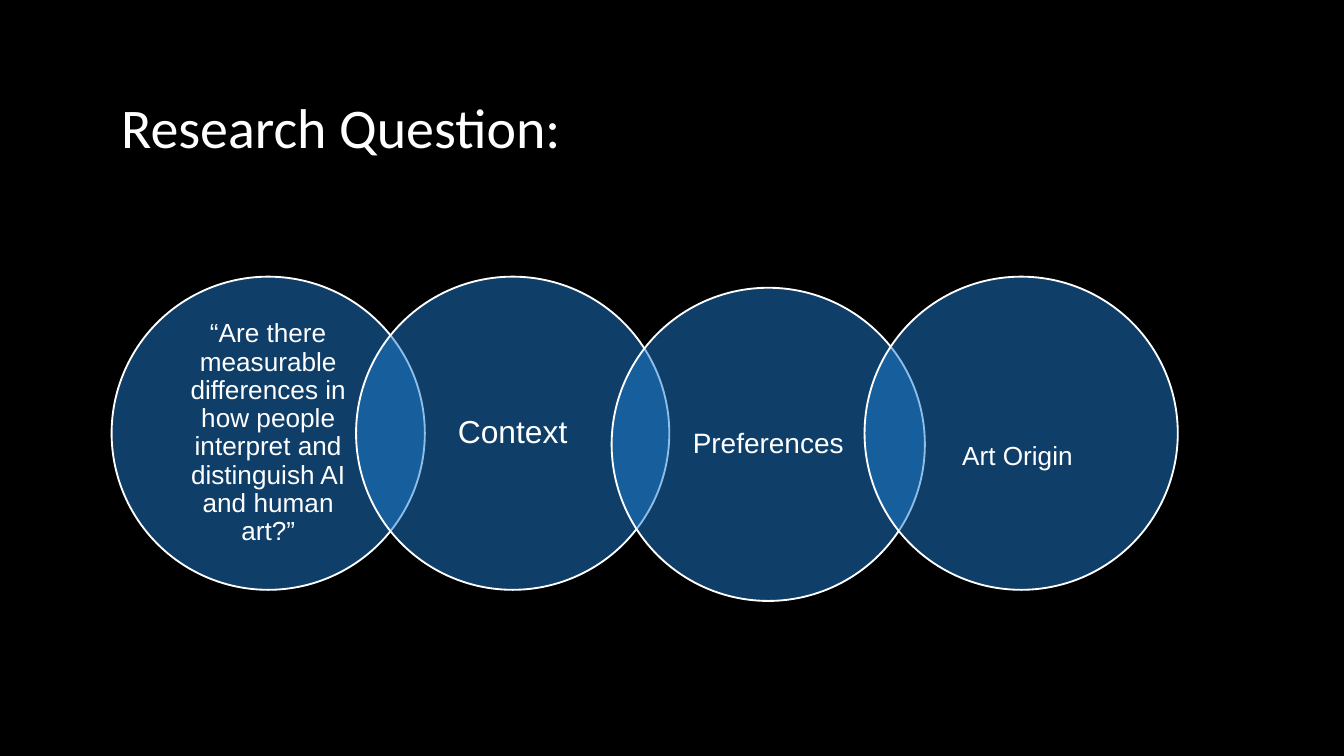
from dataclasses import dataclass

from lxml.etree import SubElement
from pptx import Presentation
from pptx.dml.color import RGBColor
from pptx.enum.shapes import MSO_SHAPE as Shape
from pptx.enum.text import MSO_ANCHOR as Anchor, PP_ALIGN as Align
from pptx.oxml.ns import qn
from pptx.util import Cm, Pt


@dataclass(frozen=True)
class Theme:
    background: RGBColor = RGBColor(0x00, 0x00, 0x00)
    white: RGBColor = RGBColor(0xFF, 0xFF, 0xFF)
    blue: RGBColor = RGBColor(0x1F, 0x7E, 0xD2)
    title_font: str = "Calibri"
    body_font: str = "Arial"
    title_size: int = 30
    large: int = 17
    medium: int = 15
    small: int = 14


theme = Theme()


def add_text(page, text, left, top, width, height, font, size):
    box = page.shapes.add_textbox(Cm(left), Cm(top), Cm(width), Cm(height))
    box.text_frame.word_wrap = True
    para = box.text_frame.paragraphs[0]
    para.text = text
    span = para.runs[0]
    span.font.name = font
    span.font.size = Pt(size)
    span.font.color.rgb = theme.white
    return box.text_frame


# Page
deck = Presentation()
deck.slide_width, deck.slide_height = Cm(25.4), Cm(14.29)
page = deck.slides.add_slide(deck.slide_layouts[6])
page.background.fill.solid()
page.background.fill.fore_color.rgb = theme.background

# Title
frame = add_text(page, "Research Question:", 2.11, 1.65, 16.23, 1.47,
                 theme.title_font, theme.title_size)
frame.margin_left = frame.margin_right = Cm(0.18)
frame.margin_top = frame.margin_bottom = Cm(0.1)

# Overlapping circles: text, left, top, type size, extra space above the text
question = ("“Are there measurable differences in how people interpret "
            "and distinguish AI and human art?”")
circles = [
    (question, 2.11, 5.23, theme.small, 0),
    ("Context", 6.73, 5.23, theme.large, 0),
    ("Preferences", 11.56, 5.44, theme.medium, 0),
    ("Art Origin ", 16.34, 5.23, theme.small, 0.9),
]
diameter, label_size = 5.92, 4.18
offset = (diameter - label_size) / 2

for text, left, top, size, space_above in circles:
    circle = page.shapes.add_shape(Shape.OVAL, Cm(left), Cm(top),
                                   Cm(diameter), Cm(diameter))
    circle.shadow.inherit = False
    circle.line.color.rgb = theme.white
    circle.line.width = Pt(1)
    circle.fill.solid()
    circle.fill.fore_color.rgb = theme.blue

    # Half-transparent fill
    color = circle.fill._xPr.find(qn("a:solidFill")).find(qn("a:srgbClr"))
    SubElement(color, qn("a:alpha")).set("val", "50000")

    # Label inside the circle
    frame = add_text(page, text, left + offset, top + offset,
                     label_size, label_size, theme.body_font, size)
    frame.vertical_anchor = Anchor.MIDDLE
    frame.margin_left = frame.margin_right = Cm(0.33)
    frame.margin_top, frame.margin_bottom = Cm(0.05 + space_above), Cm(0.05)
    frame.paragraphs[0].alignment = Align.CENTER
    frame.paragraphs[0].line_spacing = 0.9

deck.save("out.pptx")
